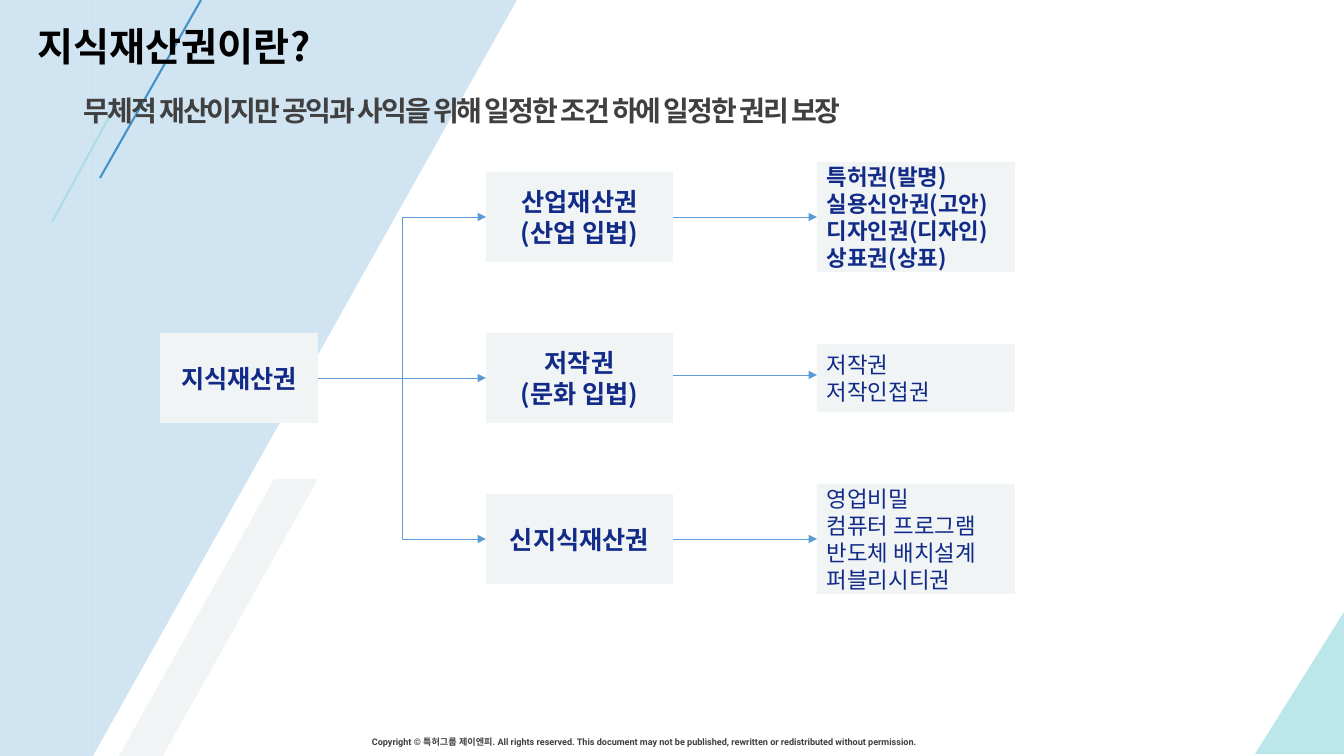
import pptx
import pptx.dml.color
import pptx.enum.shapes
import pptx.enum.text
import pptx.oxml.ns
import pptx.util
from lxml import etree

PX = 914400 / 100.8
COLORS = {
    "blue": "016DB2",
    "mint": "98DBE0",
    "panel": "F0F4F5",
    "navy": "122A88",
    "arrow": "5B9BD5",
    "gray": "404040",
    "black": "000000",
}
KOREAN = "Noto Sans CJK KR"
SHAPES = pptx.enum.shapes.MSO_SHAPE
CONNECTORS = pptx.enum.shapes.MSO_CONNECTOR
ALIGN = pptx.enum.text.PP_ALIGN
TOP, LEFT, BOTTOM, RIGHT = range(4)

TITLE = "지식재산권이란?"
SUBTITLE = "무체적 재산이지만 공익과 사익을 위해 일정한 조건 하에 일정한 권리 보장"
COPYRIGHT = ("Copyright © 특허그룹 제이엔피. All rights reserved. This document may not be "
             "published, rewritten or redistributed without permission.")
ROOT = "지식재산권"
BRANCHES = [
    (["산업재산권", "(산업 입법)"],
     ["특허권(발명)", "실용신안권(고안)", "디자인권(디자인)", "상표권(상표)"], 110, True, 0),
    (["저작권", "(문화 입법)"], ["저작권", "저작인접권"], 68, False, -3),
    (["신지식재산권"],
     ["영업비밀", "컴퓨터 프로그램", "반도체 배치설계", "퍼블리시티권"], 110, False, 0),
]


def px(*lengths):
    """Turn pixel lengths into EMU."""
    return [pptx.util.Emu(round(length * PX)) for length in lengths]


def add_child(parent, tag, **attributes):
    """Append a drawing element to a parent element."""
    return etree.SubElement(parent, pptx.oxml.ns.qn(tag), attributes)


def paint(color_format, fill_element, color, opacity=100):
    """Set a colour and, below 100 percent, its opacity."""
    color_format.rgb = pptx.dml.color.RGBColor.from_string(COLORS[color])
    if opacity < 100:
        color_element = fill_element.find(".//" + pptx.oxml.ns.qn("a:srgbClr"))
        add_child(color_element, "a:alpha", val=str(opacity * 1000))


def add_panel(slide, kind, box, color, opacity=100, flip=None):
    """Add a filled shape without outline or shadow."""
    shape = slide.shapes.add_shape(kind, *px(*box))
    shape.shadow.inherit = False
    shape.line.fill.background()
    shape.fill.solid()
    paint(shape.fill.fore_color, shape._element.spPr, color, opacity)
    if flip:
        shape._element.spPr.xfrm.set(flip, "1")
    return shape


def add_line(slide, kind, start, end, color, width, opacity=100, arrow=False):
    """Add a connector without shadow, with an optional arrowhead."""
    line = slide.shapes.add_connector(kind, *px(*start, *end))
    line.line.width = pptx.util.Pt(width)
    line.line.fill.solid()
    paint(line.line.color, line._element.spPr, color, opacity)
    if arrow:
        add_child(line.line._get_or_add_ln(), "a:tailEnd", type="triangle")
    add_child(line._element.spPr, "a:effectLst")
    return line


def write(shape, lines, size, color, bold=True, align=ALIGN.LEFT, font_name=KOREAN):
    """Write one paragraph per line and return the text frame."""
    frame = shape.text_frame
    frame.word_wrap = True
    frame.text = "\n".join(lines)
    for paragraph in frame.paragraphs:
        paragraph.alignment = align
        font = paragraph.font
        font.size = pptx.util.Pt(size)
        font.bold = bold
        font.name = font_name
        paint(font.color, font._element, color)
        add_child(font._element, "a:ea", typeface=font_name)
    return frame


def add_label(slide, box, lines, size, bold=True, align=ALIGN.CENTER):
    """Add a pale box with vertically centred navy text."""
    shape = add_panel(slide, SHAPES.RECTANGLE, box, "panel")
    frame = write(shape, lines, size, "navy", bold, align)
    frame.vertical_anchor = pptx.enum.text.MSO_ANCHOR.MIDDLE
    return shape


def join(slide, kind, first, second, start, end):
    """Draw an arrow from the right side of one box to the left side of another."""
    arrow = add_line(slide, kind, start, end, "arrow", 0.5, arrow=True)
    arrow.begin_connect(first, RIGHT)
    arrow.end_connect(second, LEFT)


def draw_background(slide, width, height):
    """Draw the tinted shapes and slanted lines at the slide edges."""
    band = 93
    add_panel(slide, SHAPES.RECTANGLE, (0, 0, band, height), "blue", 18)
    add_panel(slide, SHAPES.RIGHT_TRIANGLE, (band, 0, 424, height), "blue", 18, "flipV")
    stripe = add_panel(slide, SHAPES.PARALLELOGRAM, (119, height - 277, 199, 277), "panel")
    stripe.adjustments[0] = 0.78
    add_panel(slide, SHAPES.RIGHT_TRIANGLE, (width - 89, 612, 89, 142), "mint", 65, "flipH")
    add_line(slide, CONNECTORS.STRAIGHT, (201, 0), (100, 178), "blue", 1.5, 67)
    add_line(slide, CONNECTORS.STRAIGHT, (114, 108), (52, 222), "mint", 1.5, 67)


def draw_texts(slide):
    """Write the title, the subtitle and the copyright line."""
    title = slide.shapes.add_textbox(*px(28, 17, 710, 57))
    write(title, [TITLE], 28, "black")
    subtitle = slide.shapes.add_textbox(*px(74, 83, 989, 90))
    paragraph = write(subtitle, [SUBTITLE], 20, "gray").paragraphs[0]
    paragraph.line_spacing = pptx.util.Pt(28)
    paragraph.font._element.set("spc", "-150")
    footer = slide.shapes.add_textbox(*px(362, 731, 836, 21))
    write(footer, [COPYRIGHT], 6.5, "gray", font_name="Roboto")


def draw_tree(slide, left, top):
    """Draw the root box, its branches and the rights under each branch."""
    height, pitch = 90, 161
    root_width, branch_width, rights_width = 158, 187, 198
    branch_left, rights_left = left + 326, left + 657
    root_right, branch_right = left + root_width, branch_left + branch_width
    root_middle = top + pitch + height // 2
    root = add_label(slide, (left, top + pitch, root_width, height), [ROOT], 18)
    for index, (names, rights, rights_height, bold, shift) in enumerate(BRANCHES):
        row_top = top + index * pitch
        middle = row_top + height // 2
        branch = add_label(slide, (branch_left, row_top, branch_width, height), names, 18)
        rights_box = (rights_left, middle - rights_height // 2, rights_width, rights_height)
        rights_label = add_label(slide, rights_box, rights, 16, bold, ALIGN.LEFT)
        kind = CONNECTORS.STRAIGHT if middle == root_middle else CONNECTORS.ELBOW
        join(slide, kind, root, branch, (root_right, root_middle), (branch_left, middle))
        start, end = (branch_right, middle + shift), (rights_left, middle + shift)
        if shift:
            add_line(slide, CONNECTORS.STRAIGHT, start, end, "arrow", 0.5, arrow=True)
        else:
            join(slide, CONNECTORS.STRAIGHT, branch, rights_label, start, end)


def main():
    """Build and save the slide."""
    width, height = 1344, 756
    presentation = pptx.Presentation()
    presentation.slide_width, presentation.slide_height = px(width, height)
    slide = presentation.slides.add_slide(presentation.slide_layouts[6])
    draw_background(slide, width, height)
    draw_texts(slide)
    draw_tree(slide, 160, 172)
    presentation.save("out.pptx")


if __name__ == "__main__":
    main()
